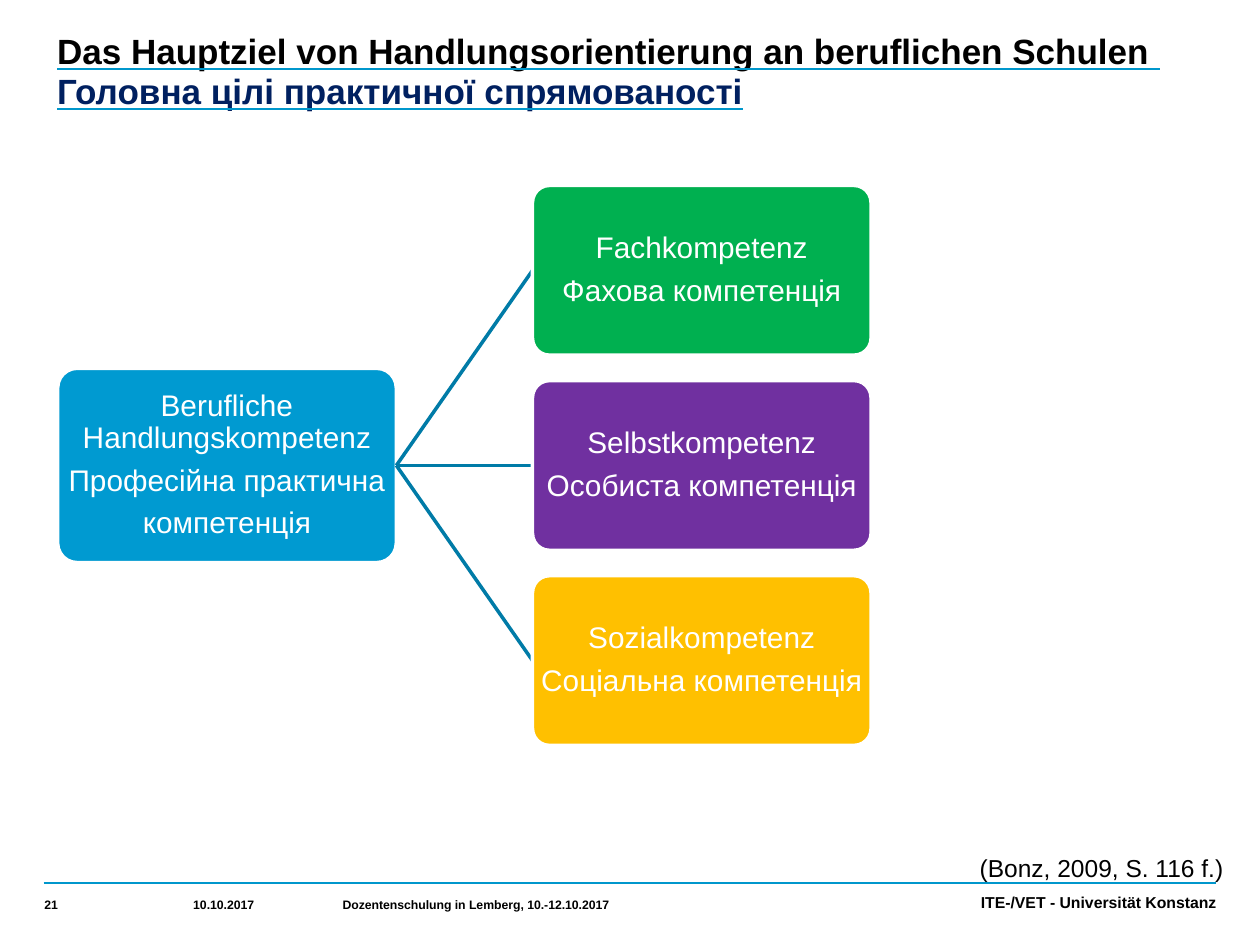
"""Build a slide linking vocational action competence to its three parts."""
import pptx
import pptx.util
import pptx.dml.color
import pptx.enum.shapes
import pptx.enum.text
import pptx.oxml
import pptx.oxml.ns

Pt = pptx.util.Pt
ALIGN = pptx.enum.text.PP_ALIGN
ANCHOR = pptx.enum.text.MSO_ANCHOR
COLORS = {
    "text": "000000", "white": "FFFFFF", "navy": "002060", "rule": "0097CC",
    "link": "007BA7", "root": "009AD1", "green": "00B050",
    "purple": "7030A0", "amber": "FFC000",
}


def rgb(name):
    return pptx.dml.color.RGBColor.from_string(COLORS[name])


def assign(obj, values):
    for name, value in values.items():
        setattr(obj, name, value)


class SlideBuilder:
    """Hold the text style and the current slide."""

    font_name = "Arial"

    def __init__(self, slide):
        self.slide = slide

    def run(self, p, text, size, color, **fmt):
        r = p.add_run()
        r.text = text
        assign(r.font, {"name": self.font_name, "size": Pt(size), **fmt})
        r.font.color.rgb = rgb(color)
        return r

    def frame(self, sp, insets, **fmt):
        sides = ("margin_left", "margin_top", "margin_right", "margin_bottom")
        margins = {side: Pt(v) for side, v in zip(sides, insets)}
        assign(sp.text_frame, {"word_wrap": True, **margins, **fmt})
        return sp.text_frame

    def title(self, lines, left, top, width, height):
        sp = self.slide.shapes.title
        assign(sp, {"left": Pt(left), "top": Pt(top), "width": Pt(width), "height": Pt(height)})
        tf = self.frame(sp, (7.2, 3.6, 7.2, 3.6), vertical_anchor=ANCHOR.TOP,
                        auto_size=pptx.enum.text.MSO_AUTO_SIZE.NONE)
        p = tf.paragraphs[0]
        assign(p, {"alignment": ALIGN.LEFT, "line_spacing": 0.95})
        for i, (text, color) in enumerate(lines):
            if i:
                p.add_line_break()
            r = self.run(p, text, 20, color, bold=True, underline=True)
            fill = pptx.oxml.parse_xml(
                f'<a:uFill {pptx.oxml.ns.nsdecls("a")}><a:solidFill>'
                f'<a:srgbClr val="{COLORS["rule"]}"/></a:solidFill></a:uFill>')
            r.font.fill._xPr.find(pptx.oxml.ns.qn("a:solidFill")).addnext(fill)

    def label(self, text, left, top, width, height, size, align=ALIGN.LEFT,
              insets=(0, 0, 0, 4.3), anchor=ANCHOR.BOTTOM, wrap=True, bold=True):
        sp = self.slide.shapes.add_textbox(Pt(left), Pt(top), Pt(width), Pt(height))
        tf = self.frame(sp, insets, vertical_anchor=anchor, word_wrap=wrap)
        p = tf.paragraphs[0]
        p.alignment = align
        self.run(p, text, size, "text", bold=bold)

    def card(self, lines, color, left, top, width, height):
        sp = self.slide.shapes.add_shape(
            pptx.enum.shapes.MSO_SHAPE.ROUNDED_RECTANGLE,
            Pt(left), Pt(top), Pt(width), Pt(height))
        sp.adjustments[0] = 0.1
        sp.shadow.inherit = False
        sp.fill.solid()
        sp.fill.fore_color.rgb = rgb(color)
        sp.line.color.rgb = rgb("white")
        sp.line.width = Pt(2)
        tf = self.frame(sp, (0.7,) * 4, vertical_anchor=ANCHOR.MIDDLE)
        for i, text in enumerate(lines):
            p = tf.add_paragraph() if i else tf.paragraphs[0]
            assign(p, {"alignment": ALIGN.CENTER, "line_spacing": 0.9, "space_after": Pt(6)})
            self.run(p, text, 17, "white")
        return sp

    def line(self, x1, y1, x2, y2, color, width):
        cxn = self.slide.shapes.add_connector(
            pptx.enum.shapes.MSO_CONNECTOR.STRAIGHT, Pt(x1), Pt(y1), Pt(x2), Pt(y2))
        cxn.line.color.rgb = rgb(color)
        cxn.line.width = Pt(width)
        cxn.element.spPr.append(
            pptx.oxml.parse_xml(f'<a:effectLst {pptx.oxml.ns.nsdecls("a")}/>'))
        return cxn

    def link(self, parent, child):
        cxn = self.line(0, 0, 0, 0, "link", 2)
        cxn.begin_connect(parent, 3)
        cxn.end_connect(child, 1)
        child.element.addprevious(cxn.element)


def main():
    prs = pptx.Presentation()
    assign(prs, {"slide_width": Pt(720), "slide_height": Pt(540)})
    s = SlideBuilder(prs.slides.add_slide(prs.slide_layouts[5]))

    s.line(25, 504.7, 695, 504.7, "rule", 1)
    s.label("ITE-/VET - Universität Konstanz", 451, 508.5, 244, 17, 9, ALIGN.RIGHT)
    s.title([("Das Hauptziel von Handlungsorientierung an beruflichen Schulen ", "text"),
             ("Головна цілі практичної спрямованості", "navy")], 25.4, 15.2, 669, 62.6)
    for text, left, width in (
            ("Dozentenschulung in Lemberg, 10.-12.10.2017", 195.8, 244),
            ("21", 25.4, 73.5), ("10.10.2017", 110.4, 73.5)):
        s.label(text, left, 508.5, width, 17, 7)

    card_w, card_h, pitch, first_top = 193.5, 97, 111.5, 106
    root_h = 111
    root_top = first_top + pitch + (card_h - root_h) / 2
    root = s.card(["Berufliche Handlungskompetenz", "Професійна практична", "компетенція"],
                  "root", 33, root_top, card_w, root_h)
    for i, (german, ukrainian, color) in enumerate((
            ("Fachkompetenz", "Фахова компетенція", "green"),
            ("Selbstkompetenz", "Особиста компетенція", "purple"),
            ("Sozialkompetenz", "Соціальна компетенція", "amber"))):
        child = s.card([german, ukrainian], color, 304.3, first_top + i * pitch, card_w, card_h)
        s.link(root, child)

    s.label("(Bonz, 2009, S. 116 f.)", 551.5, 483.8, 154.8, 24.2, 14, ALIGN.RIGHT,
            (7.2, 3.6, 7.2, 3.6), ANCHOR.TOP, False, False)
    prs.save("out.pptx")


if __name__ == "__main__":
    main()
